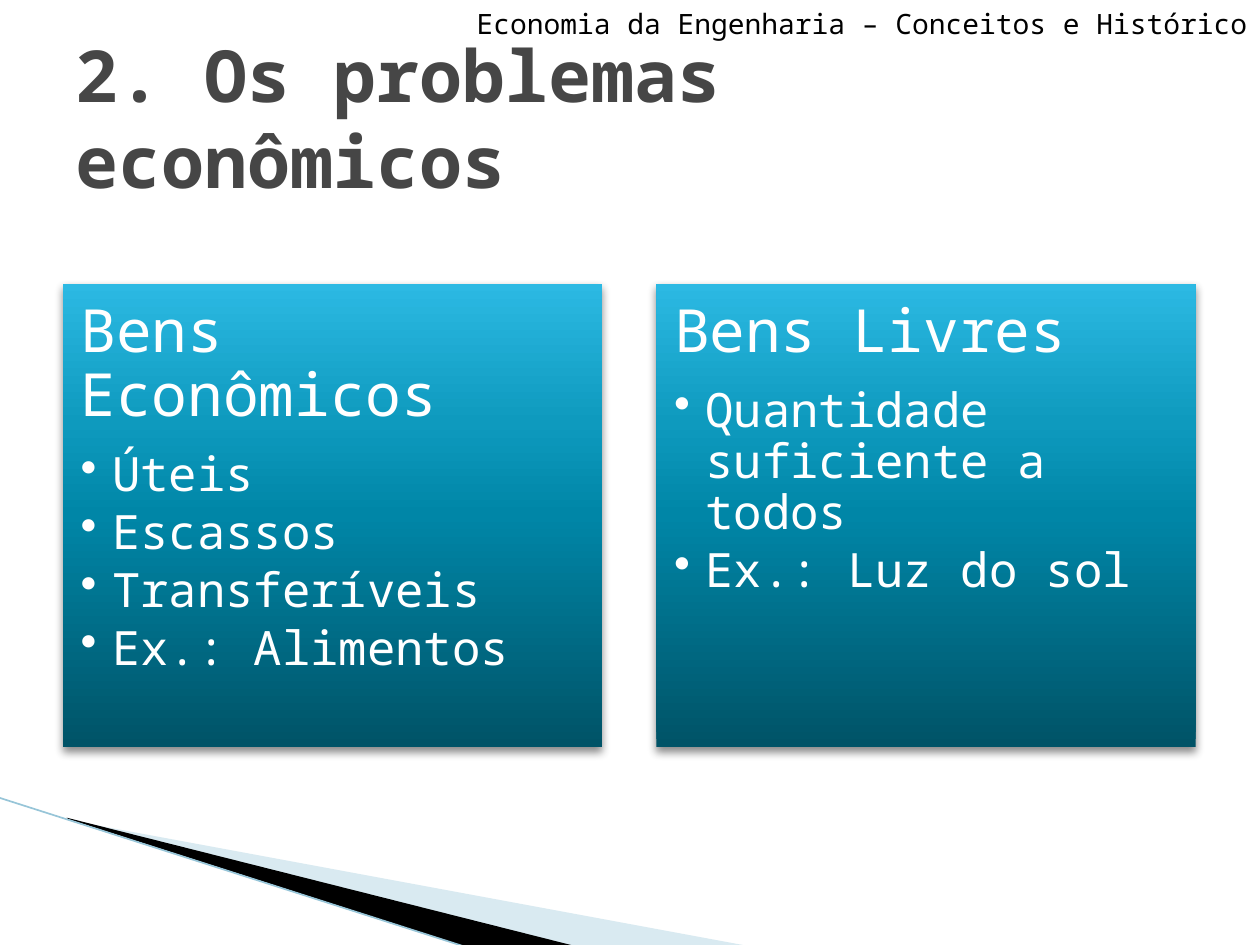
"""Build the slide comparing economic goods with free goods."""
from dataclasses import dataclass
from typing import Optional

from lxml import etree
from pptx import Presentation
from pptx import util as u
from pptx.dml.color import RGBColor
from pptx.enum import shapes, text
from pptx.oxml import parse_xml
from pptx.oxml.ns import nsdecls, qn

WIDE, HIGH = u.Inches(10), u.Inches(7.5)
FONT = "Noto Sans Mono"
WHITE = RGBColor(0xFF, 0xFF, 0xFF)
BLACK = RGBColor(0, 0, 0)
GREY = RGBColor(0x46, 0x46, 0x46)
PALE = RGBColor(0xA0, 0xCB, 0xDC)
EDGE = RGBColor(0x97, 0xC5, 0xD8)
BLEND = (
    (0, RGBColor(0x00, 0x53, 0x67)),
    (50, RGBColor(0x00, 0x86, 0xA7)),
    (70, RGBColor(0x0E, 0x9A, 0xBE)),
    (100, RGBColor(0x2C, 0xB9, 0xE3)),
)
LEFT, TOP = 0.05, 0.3
CARD_W, CARD_H, STEP = 0.428, 0.49, 0.471


@dataclass
class Card:
    """A heading with its bullet points."""

    head: str
    items: tuple[str, ...]


@dataclass
class Wedge:
    """A filled outline with corners in inches."""

    dots: tuple[tuple[float, float], ...]
    tint: RGBColor
    alpha: Optional[int] = None


@dataclass
class Label:
    """A single line of text in a box given as shares of the slide."""

    words: str
    box: tuple[float, float, float, float]
    size: int
    tint: RGBColor
    bold: bool = False
    align: text.PP_ALIGN = text.PP_ALIGN.LEFT
    anchor: text.MSO_ANCHOR = text.MSO_ANCHOR.TOP


CARDS = (
    Card("Bens Econômicos", ("Úteis", "Escassos", "Transferíveis", "Ex.: Alimentos")),
    Card("Bens Livres", ("Quantidade suficiente a todos", "Ex.: Luz do sol")),
)
WEDGES = (
    Wedge(((0.55, 6.51), (5.95, 7.51), (4.56, 7.51), (0.55, 6.5)), PALE, 40),
    Wedge(((0.53, 6.49), (4.57, 7.51), (3.72, 7.52), (0.54, 6.5)), BLACK),
)
LABELS = (
    Label("2. Os problemas econômicos", (0.05, 0.04, 0.9, 1 / 6), 41, GREY,
          bold=True, anchor=text.MSO_ANCHOR.MIDDLE),
    Label("Economia da Engenharia – Conceitos e Histórico", (0, 0, 1, 0.05), 16,
          BLACK, align=text.PP_ALIGN.RIGHT),
)


def place(x: float, y: float, w: float, h: float) -> tuple[int, ...]:
    """Turn shares of the slide into lengths."""
    return int(x * WIDE), int(y * HIGH), int(w * WIDE), int(h * HIGH)


def write(para, words: str, size: int, tint: RGBColor, bold: bool = False) -> None:
    """Add one styled run to a paragraph."""
    run = para.add_run()
    run.text = words
    run.font.name, run.font.size, run.font.bold = FONT, u.Pt(size), bold
    run.font.color.rgb = tint


def draw_wedge(slide, wedge: Wedge) -> None:
    """Draw a filled outline."""
    start, *rest = wedge.dots
    pen = slide.shapes.build_freeform(*map(u.Inches, start))
    pen.add_line_segments([(u.Inches(x), u.Inches(y)) for x, y in rest])
    form = pen.convert_to_shape()
    form.shadow.inherit = False
    form.fill.solid()
    form.fill.fore_color.rgb = wedge.tint
    form.line.fill.background()
    if wedge.alpha is not None:
        tone = next(form.element.spPr.iter(qn("a:srgbClr")))
        etree.SubElement(tone, qn("a:alpha"), val=str(wedge.alpha * 1000))


def draw_edge(slide) -> None:
    """Draw the thin slanted line."""
    ends = map(u.Inches, (-0.01, 6.33, 3.71, 7.52))
    edge = slide.shapes.add_connector(shapes.MSO_CONNECTOR.STRAIGHT, *ends)
    edge.line.color.rgb = EDGE
    edge.line.width = u.Pt(0.95)
    etree.SubElement(edge.element.spPr, qn("a:effectLst"))


def shade(form) -> None:
    """Give a shape the blue blend and a soft shadow below."""
    form.fill.gradient()
    form.fill.gradient_angle = 90
    form.line.fill.background()
    form.shadow.inherit = False
    props = form.element.spPr
    stops = next(props.iter(qn("a:gsLst")))
    for stop in list(stops):
        stops.remove(stop)
    for pos, tint in BLEND:
        stop = etree.SubElement(stops, qn("a:gs"), pos=str(pos * 1000))
        etree.SubElement(stop, qn("a:srgbClr"), val=str(tint))
    props.find(qn("a:effectLst")).append(parse_xml(
        f'<a:outerShdw {nsdecls("a")} blurRad="{u.Pt(5)}" dist="{u.Pt(3)}" '
        'dir="5400000" rotWithShape="0"><a:srgbClr val="000000">'
        '<a:alpha val="45000"/></a:srgbClr></a:outerShdw>'))


def draw_card(slide, card: Card, col: int) -> None:
    """Draw a card in its column."""
    box = place(LEFT + col * STEP, TOP, CARD_W, CARD_H)
    form = slide.shapes.add_shape(shapes.MSO_SHAPE.RECTANGLE, *box)
    shade(form)
    frame = form.text_frame
    frame.word_wrap = True
    frame.vertical_anchor = text.MSO_ANCHOR.TOP
    frame.margin_left = frame.margin_right = u.Inches(0.14)
    frame.margin_top = frame.margin_bottom = u.Inches(0.14)
    for row, words in enumerate((card.head, *card.items)):
        para = frame.add_paragraph() if row else frame.paragraphs[0]
        para.alignment = text.PP_ALIGN.LEFT
        para.line_spacing = 0.9
        para.space_after = u.Pt(4 if row else 12)
        if row:
            para.level = 1
            props = para._p.get_or_add_pPr()
            props.set("marL", str(u.Inches(0.25)))
            props.set("indent", str(u.Inches(-0.25)))
            etree.SubElement(props, qn("a:buChar"), char="•")
        write(para, words, 27 if row else 34, WHITE)


def draw_label(slide, label: Label) -> None:
    """Draw a text box."""
    frame = slide.shapes.add_textbox(*place(*label.box)).text_frame
    frame.word_wrap = True
    frame.vertical_anchor = label.anchor
    para = frame.paragraphs[0]
    para.alignment = label.align
    write(para, label.words, label.size, label.tint, label.bold)


def main() -> None:
    """Build and save the slide."""
    deck = Presentation()
    deck.slide_width, deck.slide_height = WIDE, HIGH
    slide = deck.slides.add_slide(deck.slide_layouts[6])
    for wedge in WEDGES:
        draw_wedge(slide, wedge)
    draw_edge(slide)
    for col, card in enumerate(CARDS):
        draw_card(slide, card, col)
    for label in LABELS:
        draw_label(slide, label)
    deck.save("out.pptx")


if __name__ == "__main__":
    main()
